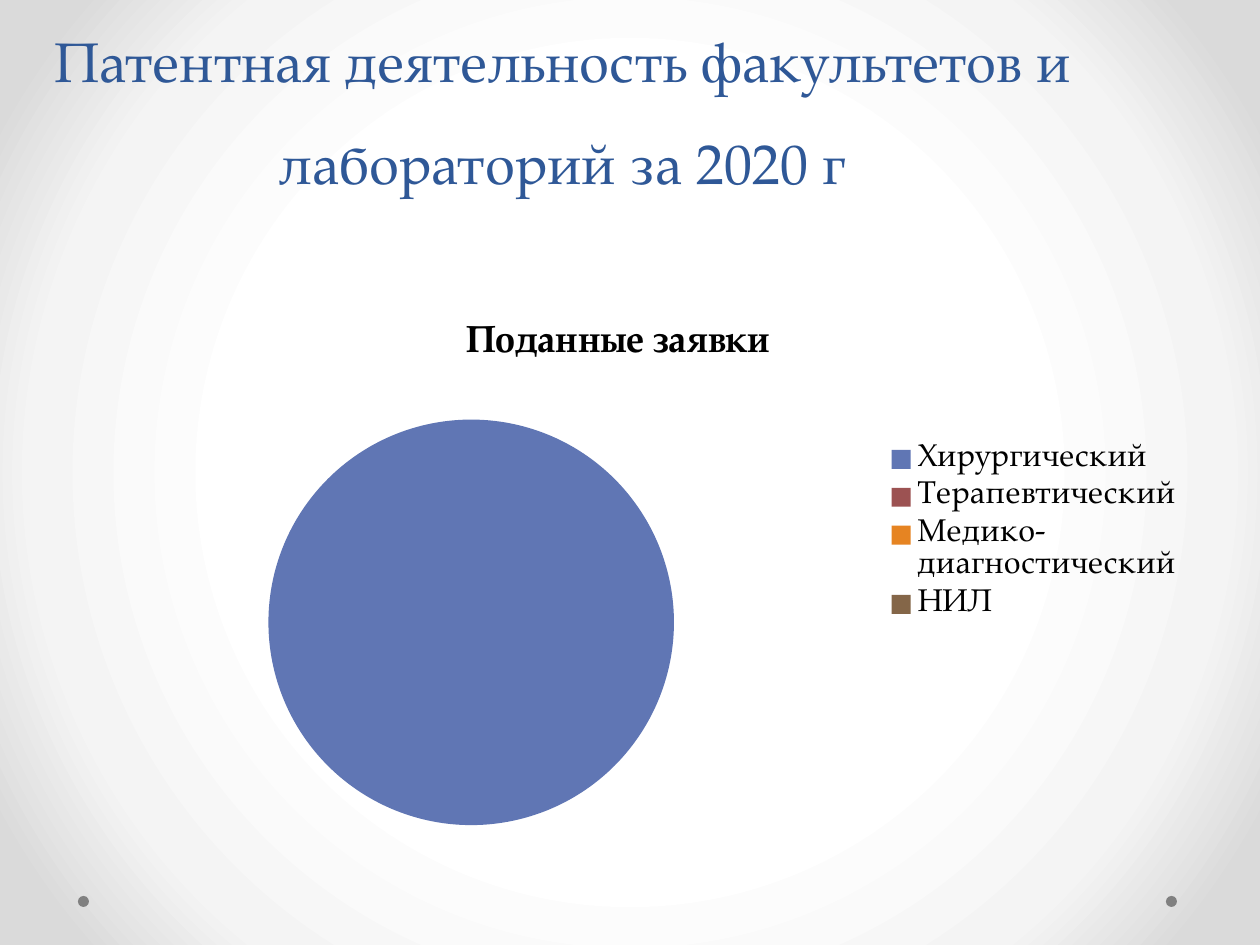
from lxml.etree import SubElement
from pptx import Presentation
from pptx.chart.data import CategoryChartData
from pptx.dml.color import RGBColor
from pptx.enum.chart import XL_CHART_TYPE, XL_LEGEND_POSITION
from pptx.enum.shapes import MSO_SHAPE
from pptx.enum.text import MSO_ANCHOR, MSO_AUTO_SIZE, PP_ALIGN
from pptx.oxml import parse_xml
from pptx.oxml.ns import nsdecls, qn
from pptx.util import Emu, Pt

COLORS = {
    "title": "2F5897",
    "text": "000000",
    "dot": "808080",
    "surgical": "6076B4",
    "therapeutic": "9C5252",
    "diagnostic": "E68422",
    "laboratory": "846648",
    "center": "FFFFFF",
    "ring": "F4F4F4",
    "edge": "DADADA",
}
FACULTIES = [
    ("Хирургический", 100, "surgical"),
    ("Терапевтический", 0, "therapeutic"),
    ("Медико-диагностический", 0, "diagnostic"),
    ("НИЛ", 0, "laboratory"),
]


def px(length):
    return Emu(round(length * 914400 / 126))


def rgb(name):
    return RGBColor.from_string(COLORS[name])


class SlideBuilder:
    font = "TeX Gyre Pagella"

    def __init__(self, slide):
        self.slide = slide

    def style(self, font, size, color, bold=False):
        font.name = self.font
        font.size = Pt(size)
        font.bold = bold
        font.color.rgb = rgb(color)

    def background(self, stops):
        marks = "".join(
            f'<a:gs pos="{position * 1000}"><a:srgbClr val="{COLORS[name]}"/></a:gs>'
            for position, name in stops
        )
        background = parse_xml(
            f'<p:bg {nsdecls("p", "a")}><p:bgPr><a:gradFill rotWithShape="1">'
            f'<a:gsLst>{marks}</a:gsLst><a:path path="circle">'
            '<a:fillToRect l="50000" t="50000" r="50000" b="50000"/></a:path>'
            '</a:gradFill><a:effectLst/></p:bgPr></p:bg>'
        )
        self.slide.element.cSld.insert(0, background)

    def dot(self, left, top, size):
        dot = self.slide.shapes.add_shape(
            MSO_SHAPE.OVAL, px(left), px(top), px(size), px(size)
        )
        dot.shadow.inherit = False
        dot.fill.solid()
        dot.fill.fore_color.rgb = rgb("dot")
        dot.line.fill.background()

    def title(self, text, left, top, width, height):
        title = self.slide.shapes.title
        title.left, title.top = px(left), px(top)
        title.width, title.height = px(width), px(height)
        frame = title.text_frame
        frame.text = text
        frame.word_wrap = True
        frame.auto_size = MSO_AUTO_SIZE.NONE
        frame.vertical_anchor = MSO_ANCHOR.BOTTOM
        paragraph = frame.paragraphs[0]
        paragraph.alignment = PP_ALIGN.CENTER
        paragraph.line_spacing = Pt(58)
        self.style(paragraph.runs[0].font, 32, "title")

    def place(self, element, **settings):
        layout = element.find(qn("c:layout"))
        if layout is None:
            layout = element.makeelement(qn("c:layout"))
            rich_text = element.find(qn("c:tx"))
            element.insert(0 if rich_text is None else 1, layout)
        for child in list(layout):
            layout.remove(child)
        manual = SubElement(layout, qn("c:manualLayout"))
        for tag, value in settings.items():
            SubElement(manual, qn(f"c:{tag}")).set("val", str(value))

    def pie(self, name, rows, left, top, width, height):
        data = CategoryChartData()
        data.categories = [label for label, _, _ in rows]
        data.add_series(name, [value for _, value, _ in rows])
        chart = self.slide.shapes.add_chart(
            XL_CHART_TYPE.PIE, px(left), px(top), px(width), px(height), data
        ).chart
        self.style(chart.font, 18, "text")
        chart.has_title = True
        heading = chart.chart_title.text_frame
        heading.text = name
        self.style(heading.paragraphs[0].runs[0].font, 21.6, "text", bold=True)
        self.place(
            chart.chart_title._element, xMode="edge", yMode="edge", x=0.35, y=0.15
        )
        chart.has_legend = True
        chart.legend.position = XL_LEGEND_POSITION.RIGHT
        chart.legend.include_in_layout = False
        self.style(chart.legend.font, 18, "text")
        plot = chart.plots[0]
        plot.vary_by_categories = True
        for index, (_, _, color) in enumerate(rows):
            point = plot.series[0].points[index]
            point.format.fill.solid()
            point.format.fill.fore_color.rgb = rgb(color)
            point.format.line.fill.background()
        self.place(
            chart._chartSpace.chart.plotArea,
            layoutTarget="inner", xMode="edge", yMode="edge",
            x=0.18, y=0.32, w=0.36, h=0.65,
        )


def main():
    deck = Presentation()
    deck.slide_width, deck.slide_height = px(1260), px(945)
    page = SlideBuilder(deck.slides.add_slide(deck.slide_layouts[5]))
    page.background([(50, "center"), (76, "ring"), (92, "edge")])
    for left in (1166, 78):
        page.dot(left, 896, 11)
    page.title(
        "Патентная деятельность факультетов и лабораторий за 2020 г", 0, 0, 1126, 202
    )
    page.pie("Поданные заявки", FACULTIES, 63, 220, 1134, 624)
    deck.save("out.pptx")


if __name__ == "__main__":
    main()
